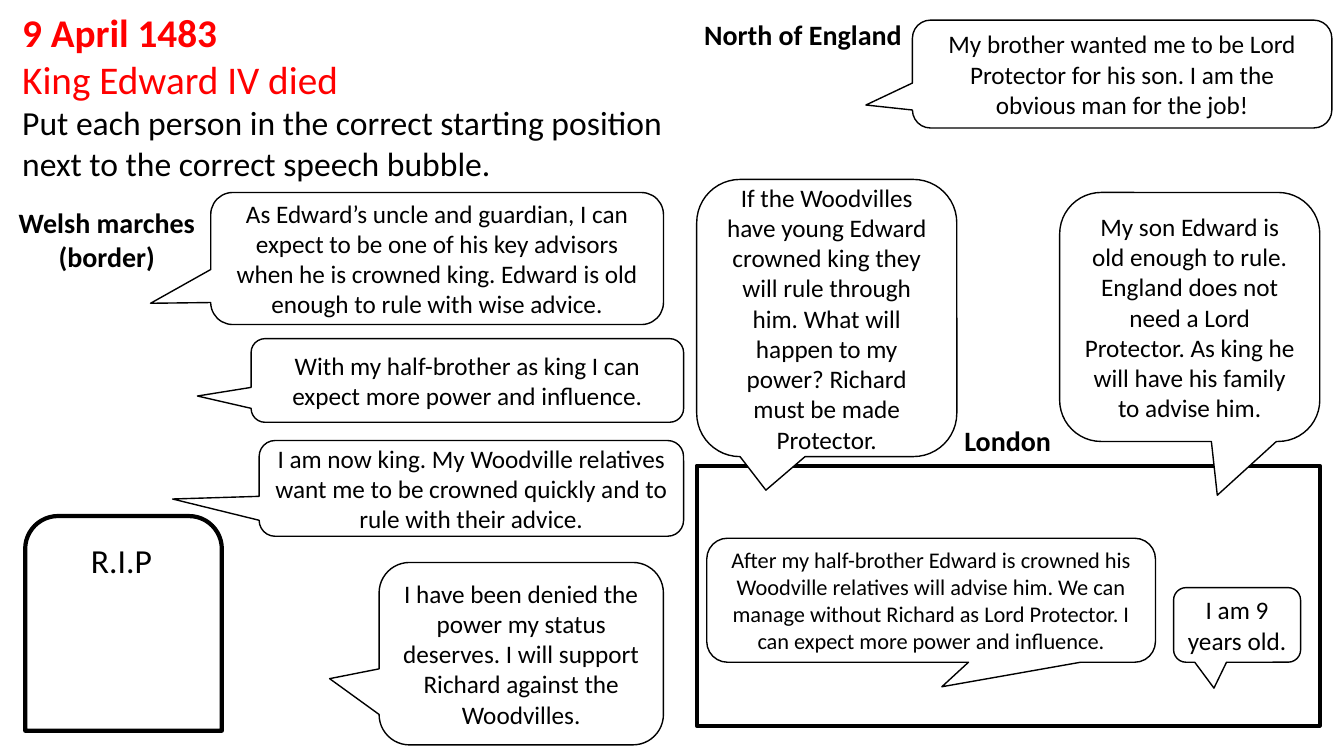
"""Build the 9 April 1483 speech bubble activity slide."""
from pptx import Presentation
from pptx.dml.color import RGBColor
from pptx.enum.shapes import MSO_SHAPE as SHAPE
from pptx.enum.text import MSO_ANCHOR as ANCHOR, MSO_AUTO_SIZE as AUTO, PP_ALIGN as ALIGN
from pptx.util import Inches, Pt

BLACK, RED, WHITE = "000000", "FF0000", "FFFFFF"

HEADING = [
    ("9 April 1483", 28, RED, True),
    ("King Edward IV died", 28, RED, False),
    ("Put each person in the correct starting position next to the correct speech bubble.",
     24, BLACK, False),
]

BUBBLES = [
    ((2.57, 4.37, 4.21, 0.95), (-0.704, 0.111), None, 18,
     "I am now king. My Woodville relatives want me to be crowned quickly and to rule "
     "with their advice."),
    ((2.09, 1.91, 4.49, 1.31), (-0.633, 0.339), None, 18,
     "As Edward’s uncle and guardian, I can expect to be one of his key advisors when he "
     "is crowned king. Edward is old enough to rule with wise advice."),
    ((2.49, 3.36, 4.29, 0.83), (-0.624, 0.186), None, 18,
     "With my half-brother as king I can expect more power and influence."),
    ((9.05, 0.2, 4.16, 1.07), (-0.611, 0.287), None, 18,
     "My brother wanted me to be Lord Protector for his son. I am the obvious man for the job!"),
    ((3.76, 5.58, 2.82, 1.81), (-0.674, 0.137), None, 18,
     "I have been denied the power my status deserves. I will support Richard against the "
     "Woodvilles."),
    ((6.91, 1.78, 2.58, 2.75), (-0.234, 0.621), WHITE, 18,
     "If the Woodvilles have young Edward crowned king they will rule through him. What will "
     "happen to my power? Richard must be made Protector."),
    ((10.51, 1.91, 2.58, 2.47), (0.106, 0.716), WHITE, 18,
     "My son Edward is old enough to rule. England does not need a Lord Protector. As king he "
     "will have his family to advise him."),
    ((7.01, 5.34, 4.45, 1.23), (0.024, 0.698), None, 16,
     "After my half-brother Edward is crowned his Woodville relatives will advise him. We can "
     "manage without Richard as Lord Protector. I can expect more power and influence."),
    ((11.64, 5.83, 1.26, 0.74), (-0.182, 0.847), None, 18, "I am 9 years old."),
]


def rgb(value):
    """Turn a hex string into a colour."""
    return RGBColor.from_string(value)


class Board:
    """Hold the style and the current slide."""

    font = "Calibri"

    def __init__(self, s):
        """Keep the slide to draw on."""
        self.s = s

    def style(self, p, size, color=BLACK, bold=False, align=ALIGN.CENTER):
        """Format a paragraph and its runs."""
        p.alignment = align
        for r in p.runs:
            r.font.name = self.font
            r.font.size = Pt(size)
            r.font.bold = bold
            r.font.color.rgb = rgb(color)

    def title(self, box, lines):
        """Place and fill the title placeholder."""
        sp = self.s.shapes.title
        sp.left, sp.top, sp.width, sp.height = map(Inches, box)
        tf = sp.text_frame
        tf.text = "\n".join(line[0] for line in lines)
        tf.word_wrap = True
        tf.auto_size = AUTO.NONE
        tf.vertical_anchor = ANCHOR.TOP
        for p, (_, size, color, bold) in zip(tf.paragraphs, lines):
            self.style(p, size, color, bold, ALIGN.LEFT)

    def label(self, box, text, size=20, bold=True):
        """Add a centred caption."""
        sp = self.s.shapes.add_textbox(*map(Inches, box))
        tf = sp.text_frame
        tf.text = text
        tf.word_wrap = True
        self.style(tf.paragraphs[0], size, bold=bold)
        return sp

    def shape(self, kind, box, width, fill=None):
        """Add a black-outlined shape."""
        sp = self.s.shapes.add_shape(kind, *map(Inches, box))
        sp.shadow.inherit = False
        sp.line.color.rgb = rgb(BLACK)
        sp.line.width = Pt(width)
        if fill:
            sp.fill.solid()
            sp.fill.fore_color.rgb = rgb(fill)
        else:
            sp.fill.background()
        return sp

    def bubble(self, box, tip, fill, size, text):
        """Add a speech bubble pointing at its tip."""
        sp = self.shape(SHAPE.ROUNDED_RECTANGULAR_CALLOUT, box, 1, fill)
        sp.adjustments[0], sp.adjustments[1] = tip
        tf = sp.text_frame
        tf.text = text
        tf.word_wrap = True
        tf.vertical_anchor = ANCHOR.MIDDLE
        self.style(tf.paragraphs[0], size)


def main():
    """Build and save the slide."""
    prs = Presentation()
    prs.slide_width, prs.slide_height = Inches(13.33), Inches(7.5)
    board = Board(prs.slides.add_slide(prs.slide_layouts[5]))
    board.title((0.12, 0.03, 6.66, 1.85), HEADING)
    board.shape(SHAPE.ROUND_2_SAME_RECTANGLE, (0.25, 5.12, 1.95, 2.13), 3)
    board.label((0.24, 5.31, 1.93, 0.5), "R.I.P", 24, False)
    board.shape(SHAPE.RECTANGLE, (6.91, 4.62, 6.18, 2.58), 3)
    london = board.label((6.91, 4.15, 6.17, 0.44), "London")
    london.fill.solid()
    london.fill.fore_color.rgb = rgb(WHITE)
    board.label((0.08, 1.99, 1.96, 0.77), "Welsh marches (border)")
    board.label((4.88, 0.12, 6.17, 0.44), "North of England")
    for bubble in BUBBLES:
        board.bubble(*bubble)
    prs.save("out.pptx")


if __name__ == "__main__":
    main()
